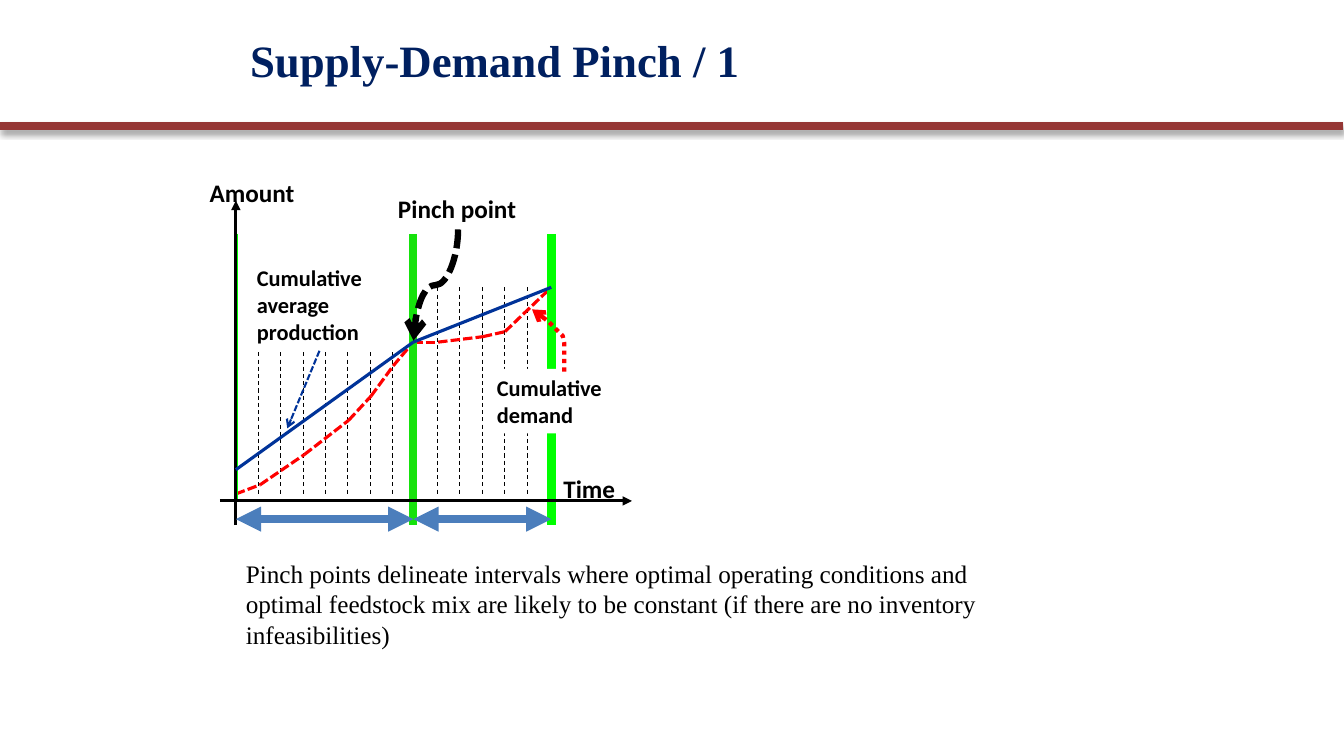
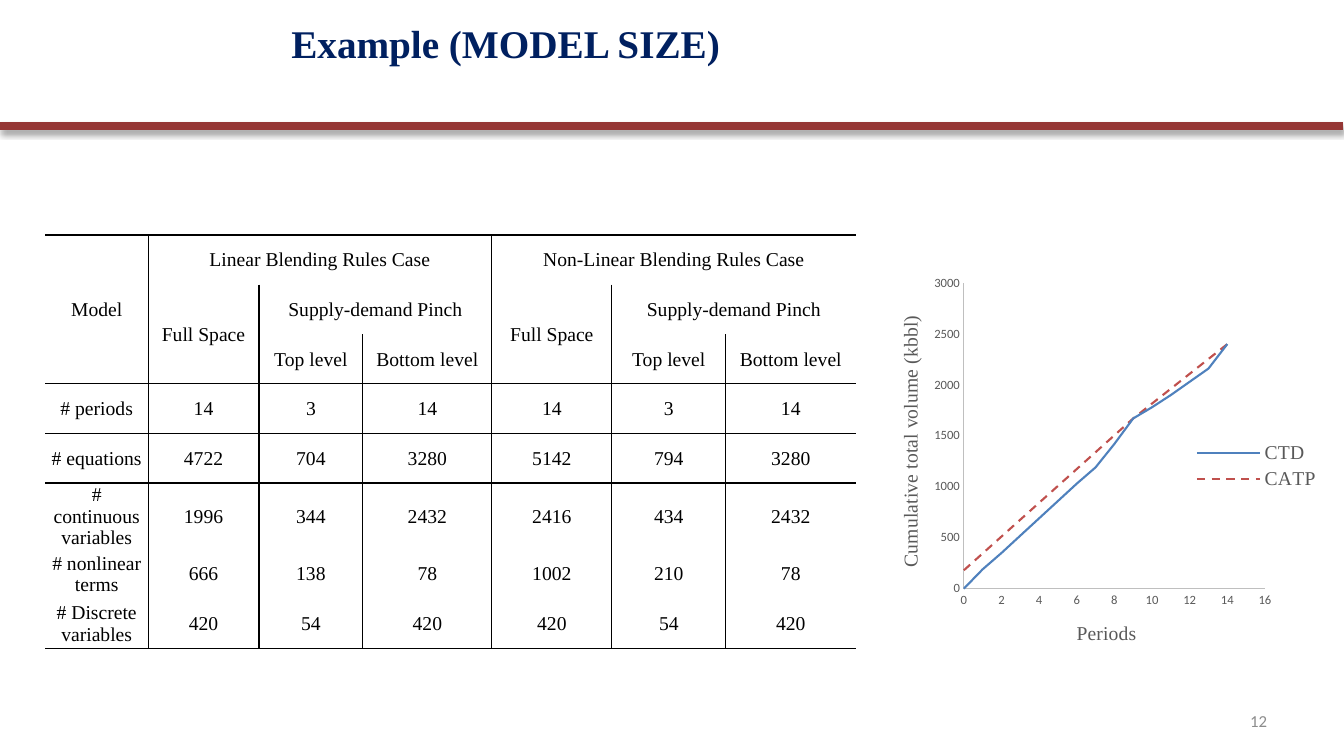
"""Build two slides on the supply-demand pinch: a diagram, then a table with a chart."""
from dataclasses import dataclass
from itertools import pairwise

from lxml import etree
from pptx import Presentation
from pptx.chart.data import XyChartData
from pptx.dml.color import RGBColor
from pptx.enum import chart as ch, dml, shapes as sh, text as tx
from pptx.oxml.ns import qn
from pptx.util import Pt


@dataclass(frozen=True)
class Theme:
    """Colours, fonts and type sizes."""
    navy: str = "002060"
    band: str = "953735"
    ink: str = "000000"
    white: str = "FFFFFF"
    red: str = "FF0000"
    blue: str = "003399"
    lime: str = "00FF00"
    green: str = "16E20C"
    steel: str = "4B7EBC"
    grey: str = "595959"
    pale: str = "BFBFBF"
    mute: str = "8C8C8C"
    serif: str = "Times New Roman"
    sans: str = "Calibri"
    body: int = 18
    note: int = 16
    cell: int = 14
    num: int = 12
    tick: int = 9


T = Theme()
DASH = dml.MSO_LINE.DASH
SHORT = dml.MSO_LINE.SQUARE_DOT
DOT = dml.MSO_LINE.ROUND_DOT

TITLES = [
    ("Supply-Demand Pinch / 1", 32, (171.4, 18.7, 664.6, 47.5)),
    ("Example (MODEL SIZE)", 28, (200.9, 9.4, 567.4, 42.5)),
]
CLAIM = ("Pinch points delineate intervals where optimal operating conditions and "
         "optimal feedstock mix are likely to be constant (if there are no inventory "
         "infeasibilities)")

START, PINCH, END = 168.5, 295.2, 393.8
STEP, PERIODS, PINCHED = 16, 13, 8
DEMAND = [(START, 352.8), (185.8, 346.3), (217.4, 324.7), (249.1, 300.2), (265, 283),
          (280.8, 261.4), (PINCH, 244.4), (313, 244.4), (344.9, 240.5), (360.7, 236.9),
          (END, 205.2)]
SUPPLY = [(START, 335.5), (PINCH, 244.4), (END, 205.2)]
BARS = [(START, 356.4, T.lime, 3), (PINCH, 375.1, T.green, 6), (END, 375.1, T.lime, 6)]
HOOK = [(380.2, 221), (384.5, 225.4), (387.4, 226.1), (392.4, 229.7), (398.2, 236.2),
        (402.2, 239.8), (403.4, 245), (403.2, 252), (403, 266.4)]
WORDS = [("Time", (395.3, 334.8, 51.8, 28.8)),
         ("Amount", (142.6, 123.1, 75.6, 28.8)),
         ("Pinch point", (277.2, 134.6, 99.4, 28.8))]

COLS = [73.4, 79.2, 74.2, 92.2, 85.7, 81.4, 92.9]
ROW = 35.45
ROWS = [
    ["Model", "Linear Blending Rules Case", "", "", "Non-Linear Blending Rules Case", "", ""],
    ["", "Full Space", "Supply-demand Pinch", "", "Full Space", "Supply-demand Pinch", ""],
    ["", "", "Top level", "Bottom level", "", "Top level", "Bottom level"],
    ["# periods", "14", "3", "14", "14", "3", "14"],
    ["# equations", "4722", "704", "3280", "5142", "794", "3280"],
    ["# continuous variables", "1996", "344", "2432", "2416", "434", "2432"],
    ["# nonlinear terms", "666", "138", "78", "1002", "210", "78"],
    ["# Discrete variables", "420", "54", "420", "420", "54", "420"],
]
SPANS = [((0, 0), (2, 0))] + [
    span for c in (1, 4) for span in (((0, c), (0, c + 2)), ((1, c), (2, c)),
                                      ((1, c + 1), (1, c + 2)))]
RULES = {0, 3, 4, 8}
SPLITS = {1: 0, 2: 1, 4: 0, 5: 1}

CURVES = [
    ("CTD", "4F81BD", None, list(enumerate(
        [0, 190, 350, 520, 690, 860, 1030, 1190, 1420, 1670, 1780, 1900, 2030, 2160, 2400]))),
    ("CATP", "C0504D", DASH, [(0, 180), (9, 1670), (14, 2400)]),
]


def rgb(code):
    return RGBColor.from_string(code)


def pts(box):
    return [Pt(v) for v in box]


def style(font, size, color, face, bold=False):
    font.size, font.name, font.bold = Pt(size), face, bold
    font.color.rgb = rgb(color)


def fill_text(frame, words, size, color, face, bold=False, align=tx.PP_ALIGN.LEFT):
    frame.text = words
    for para in frame.paragraphs:
        para.alignment = align
        for run in para.runs:
            style(run.font, size, color, face, bold)


def label(host, words, box, size=T.body, face=T.sans, bold=True, color=T.ink, wrap=True,
          fill=None, align=tx.PP_ALIGN.LEFT):
    shape = host.add_textbox(*pts(box))
    shape.text_frame.word_wrap = wrap
    if fill:
        shape.fill.solid()
        shape.fill.fore_color.rgb = rgb(fill)
    fill_text(shape.text_frame, words, size, color, face, bold, align)
    return shape


def stroke(shape, color, width, dash=None, head=None, tail=None):
    shape.line.color.rgb = rgb(color)
    shape.line.width = Pt(width)
    if dash:
        shape.line.dash_style = dash
    ln = shape.element.spPr.find(qn("a:ln"))
    for tag, kind in (("a:headEnd", head), ("a:tailEnd", tail)):
        if kind:
            etree.SubElement(ln, qn(tag), type=kind)


def link(host, a, b, color, width, dash=None, head=None, tail=None,
         kind=sh.MSO_CONNECTOR.STRAIGHT):
    line = host.add_connector(kind, *pts(a + b))
    stroke(line, color, width, dash, head, tail)
    etree.SubElement(line.element.spPr, qn("a:effectLst"))
    return line


def add_band(prs, slide):
    line = link(slide.shapes, (0, 90), (959, 90), T.band, 6)
    glow = line.element.spPr.find(qn("a:effectLst"))
    shade = etree.SubElement(glow, qn("a:outerShdw"), blurRad=str(Pt(4)), dist=str(Pt(3)),
                             dir="5400000", rotWithShape="0")
    tint = etree.SubElement(shade, qn("a:srgbClr"), val=T.ink)
    etree.SubElement(tint, qn("a:alpha"), val="40000")
    prs.slide_master.element.cSld.spTree.append(line.element)


def add_page(prs, words, size, box):
    slide = prs.slides.add_slide(prs.slide_layouts[5])
    title = slide.shapes.title
    title.left, title.top, title.width, title.height = pts(box)
    fill_text(title.text_frame, words, size, T.navy, T.serif, True)
    return slide


def draw_pinch(slide):
    host = slide.shapes.add_group_shape().shapes
    for k in range(1, PERIODS + 1):
        if k != PINCHED:
            x = START + k * STEP
            link(host, (x, 205.2), (x, 352.8), T.ink, 0.75, DASH)
    for a, b in pairwise(DEMAND):
        link(host, a, b, T.red, 2.25, SHORT)
    for x, foot, color, width in BARS:
        link(host, (x, 167), (x, foot), color, width)
    link(host, (START, 375.1), (START, 143.3), T.ink, 2.25, tail="triangle")
    label(host, "Cumulative demand", (347.8, 263.5, 108.7, 46.1), T.note, fill=T.white)
    for a, b in pairwise(SUPPLY):
        link(host, a, b, T.blue, 2.25)
    label(host, "Cumulative average production", (176.4, 185, 104.4, 65.5), T.note,
          fill=T.white)
    link(host, (157, 357.8), (451.4, 357.8), T.ink, 2.25, tail="triangle")
    for words, box in WORDS:
        label(host, words, box, wrap=False)
    link(host, (228.2, 250.6), (205.2, 306), T.blue, 1.5, SHORT, tail="arrow")
    for a, b in pairwise((START, PINCH, END)):
        link(host, (a, 370.8), (b, 370.8), T.steel, 6, head="triangle", tail="triangle")
    bend = link(host, (271.6, 187.7), (351, 219.5), T.ink, 4.5, SHORT, tail="arrow",
                kind=sh.MSO_CONNECTOR.CURVE)
    bend.element.spPr.find(qn("a:xfrm")).set("rot", "5400000")
    path = slide.shapes.build_freeform(*HOOK[0], scale=Pt(1))
    path.add_line_segments(HOOK[1:], close=False)
    hook = path.convert_to_shape()
    hook.fill.background()
    hook.shadow.inherit = False
    stroke(hook, T.red, 3, DOT, head="arrow")
    label(slide.shapes, CLAIM, (168.5, 395.3, 576.7, 72.7), face=T.serif, bold=False)


def rule_cell(cell, r, c):
    sides = {"L": c in SPLITS and r >= SPLITS[c],
             "R": c + 1 in SPLITS and r >= SPLITS[c + 1],
             "T": r in RULES, "B": r + 1 in RULES}
    props = cell._tc.get_or_add_tcPr()
    for side, shown in sides.items():
        if shown:
            ln = etree.SubElement(props, qn("a:ln" + side), w=str(Pt(1)))
            paint = etree.SubElement(ln, qn("a:solidFill"))
            etree.SubElement(paint, qn("a:srgbClr"), val=T.ink)


def add_sizes(slide):
    frame = slide.shapes.add_table(len(ROWS), len(COLS),
                                   *pts((32.4, 167.8, sum(COLS), ROW * len(ROWS))))
    table = frame.table
    table.first_row = table.horz_banding = False
    look = table._tbl.tblPr.find(qn("a:tableStyleId"))
    look.text = "{2D5ABB26-0587-4C30-8999-92F81FD0307C}"
    for col, width in zip(table.columns, COLS):
        col.width = Pt(width)
    for r, words in enumerate(ROWS):
        table.rows[r].height = Pt(ROW)
        for c, word in enumerate(words):
            cell = table.cell(r, c)
            rule_cell(cell, r, c)
            cell.fill.background()
            cell.vertical_anchor = tx.MSO_ANCHOR.MIDDLE
            cell.margin_left = cell.margin_right = cell.margin_top = Pt(0.72)
            cell.margin_bottom = 0
            if word:
                fill_text(cell.text_frame, word, T.cell, T.ink, T.serif,
                          align=tx.PP_ALIGN.CENTER)
    for a, b in SPANS:
        table.cell(*a).merge(table.cell(*b))


def place(host, spot, **marks):
    for old in host.findall(qn("c:layout")):
        host.remove(old)
    layout = etree.Element(qn("c:layout"))
    manual = etree.SubElement(layout, qn("c:manualLayout"))
    for tag, val in marks.items():
        etree.SubElement(manual, qn("c:" + tag), val=str(val))
    host.insert(spot, layout)


def set_axis(axis, words, top, unit):
    axis.minimum_scale, axis.maximum_scale, axis.major_unit = 0, top, unit
    axis.has_major_gridlines = False
    axis.major_tick_mark = axis.minor_tick_mark = ch.XL_TICK_MARK.NONE
    axis.format.line.color.rgb = rgb(T.pale)
    axis.format.line.width = Pt(0.75)
    style(axis.tick_labels.font, T.tick, T.grey, T.sans)
    fill_text(axis.axis_title.text_frame, words, T.cell, T.grey, T.serif,
              align=tx.PP_ALIGN.CENTER)


def add_curves(slide):
    data = XyChartData()
    for name, _, _, spots in CURVES:
        row = data.add_series(name)
        for x, y in spots:
            row.add_data_point(x, y)
    chart = slide.shapes.add_chart(ch.XL_CHART_TYPE.XY_SCATTER_LINES_NO_MARKERS,
                                   *pts((638.6, 190.8, 311.8, 283.7)), data).chart
    style(chart.font, 10, T.ink, T.sans)
    chart.has_title = False
    chart.has_legend = True
    chart.legend.position = ch.XL_LEGEND_POSITION.RIGHT
    chart.legend.include_in_layout = False
    style(chart.legend.font, T.cell, T.grey, T.serif)
    plot = chart.plots[0]
    plot.vary_by_categories = False
    for row, (_, color, dash, _) in zip(plot.series, CURVES):
        row.smooth = False
        row.marker.style = ch.XL_MARKER_STYLE.NONE
        row.format.line.color.rgb = rgb(color)
        row.format.line.width = Pt(1.5)
        if dash:
            row.format.line.dash_style = dash
    set_axis(chart.category_axis, "Periods", 16, 2)
    set_axis(chart.value_axis, "Cumulative total volume (kbbl)", 3000, 500)
    place(chart.category_axis.axis_title.element, 1, xMode="edge", yMode="edge",
          x=0.41, y=0.88)
    place(chart.element.chart.plotArea, 0, layoutTarget="inner", xMode="edge",
          yMode="edge", x=0.16, y=0.04, w=0.69, h=0.77)


def main():
    prs = Presentation()
    prs.slide_width, prs.slide_height = Pt(960), Pt(540)
    pinch, sizes = [add_page(prs, *title) for title in TITLES]
    add_band(prs, pinch)
    draw_pinch(pinch)
    add_sizes(sizes)
    add_curves(sizes)
    page = label(sizes.shapes, "12", (688.3, 500.4, 223.9, 28.8), T.num, bold=False,
                 color=T.mute, align=tx.PP_ALIGN.RIGHT)
    page.text_frame.vertical_anchor = tx.MSO_ANCHOR.MIDDLE
    prs.save("out.pptx")


if __name__ == "__main__":
    main()
